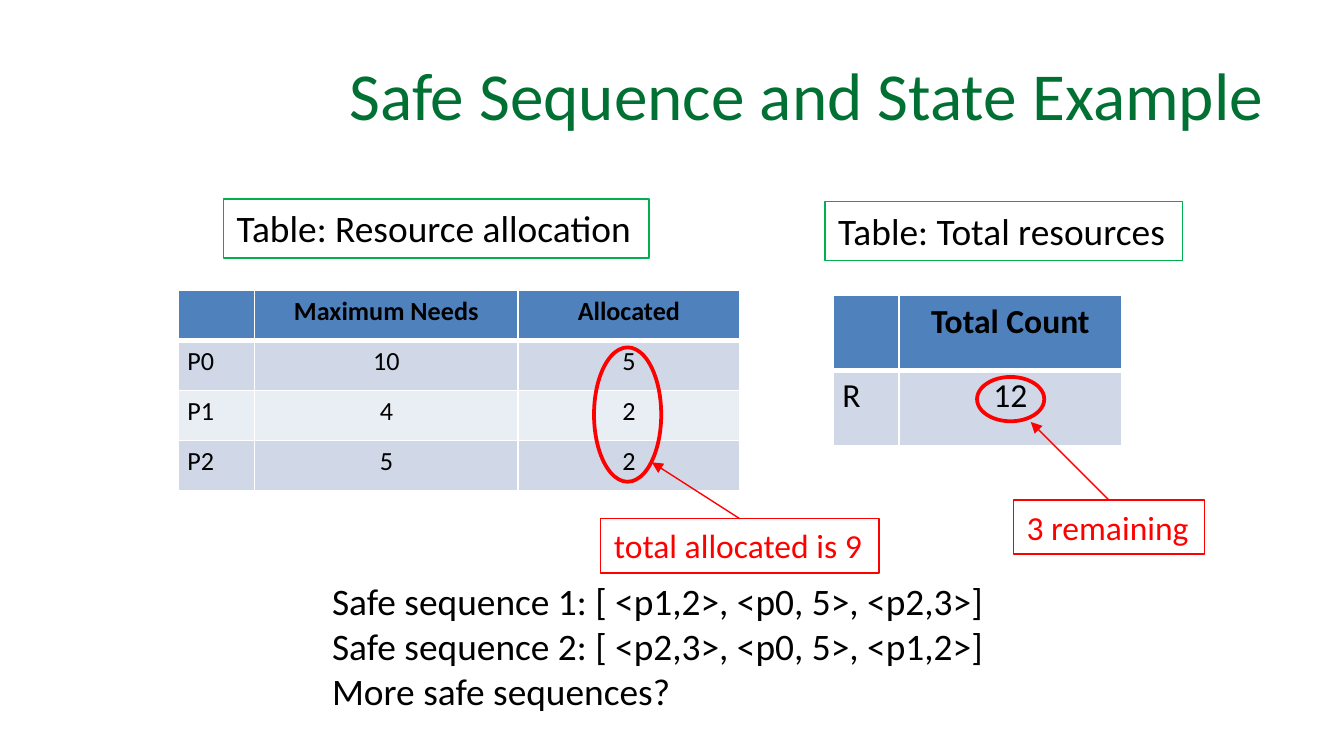
from dataclasses import dataclass

from pptx import Presentation
from pptx import util as u
from pptx.dml.color import RGBColor
from pptx.enum import shapes, text
from pptx.oxml import ns, xmlchemy
from lxml import etree

FONT = "Calibri"
BLACK = RGBColor(0x00, 0x00, 0x00)
WHITE = RGBColor(0xFF, 0xFF, 0xFF)
TITLE_GREEN = RGBColor(0x00, 0x70, 0x33)
CAPTION_GREEN = RGBColor(0x00, 0xB0, 0x50)
RED = RGBColor(0xFF, 0x00, 0x00)
HEADER_BLUE = RGBColor(0x4F, 0x81, 0xBD)
BANDS = (RGBColor(0xD0, 0xD8, 0xE8), RGBColor(0xE9, 0xED, 0xF4))

COLUMNS, ROWS = 100, 56.25
UNIT = u.Inches(10) / COLUMNS


@dataclass
class Box:
    left: float
    top: float
    width: float
    height: float

    def inside(self, left, top, width, height):
        return Box(self.left + left, self.top + top, width, height)

    def lengths(self):
        return [grid(n) for n in (self.left, self.top, self.width, self.height)]


def grid(cells):
    return u.Emu(round(cells * UNIT))


def write(text_frame, words, size, color, align=text.PP_ALIGN.LEFT, bold=False):
    text_frame.text = words
    for paragraph in text_frame.paragraphs:
        paragraph.alignment = align
        for run in paragraph.runs:
            run.font.name = FONT
            run.font.size = u.Pt(size)
            run.font.bold = bold
            run.font.color.rgb = color


def add_text(slide, box, words, size, color, align=text.PP_ALIGN.LEFT,
             outline=None, wrap=False):
    shape = slide.shapes.add_textbox(*box.lengths())
    shape.text_frame.word_wrap = wrap
    write(shape.text_frame, words, size, color, align)
    if outline is not None:
        shape.line.color.rgb = outline
        shape.line.width = u.Pt(0.75)
    return shape


def add_ring(slide, box):
    ring = slide.shapes.add_shape(shapes.MSO_SHAPE.OVAL, *box.lengths())
    ring.shadow.inherit = False
    ring.fill.background()
    ring.line.color.rgb = RED
    ring.line.width = u.Pt(2)


def add_arrow(slide, label, left, top):
    arrow = slide.shapes.add_connector(
        shapes.MSO_CONNECTOR.STRAIGHT, 0, 0, grid(left), grid(top))
    arrow.begin_connect(label, 0)
    arrow.line.color.rgb = RED
    arrow.line.width = u.Pt(0.75)
    properties = arrow._element.spPr
    head = etree.SubElement(properties.find(ns.qn("a:ln")), ns.qn("a:tailEnd"))
    head.set("type", "triangle")
    etree.SubElement(properties, ns.qn("a:effectLst"))


def add_borders(cell, row):
    properties = cell._tc.get_or_add_tcPr()
    widths = {"L": 1, "R": 1, "T": 3 if row == 1 else 1, "B": 3 if row == 0 else 1}
    for side, width in widths.items():
        border = xmlchemy.OxmlElement(f"a:ln{side}")
        border.set("w", str(u.Pt(width)))
        fill = etree.SubElement(border, ns.qn("a:solidFill"))
        etree.SubElement(fill, ns.qn("a:srgbClr")).set("val", str(WHITE))
        properties.append(border)


def add_grid_table(slide, box, widths, values, size):
    table = slide.shapes.add_table(len(values), len(widths), *box.lengths()).table
    for column, width in zip(table.columns, widths):
        column.width = grid(width)
    for row, line in enumerate(values):
        table.rows[row].height = grid(box.height / len(values))
        for column, words in enumerate(line):
            cell = table.cell(row, column)
            cell.margin_left = cell.margin_right = grid(0.7)
            cell.margin_top = cell.margin_bottom = grid(0.4)
            align = text.PP_ALIGN.CENTER if column else text.PP_ALIGN.LEFT
            write(cell.text_frame, words, size, BLACK, align, bold=row == 0)
            if not words:
                end = etree.SubElement(
                    cell.text_frame.paragraphs[0]._p, ns.qn("a:endParaRPr"))
                end.set("sz", str(size * 100))
            add_borders(cell, row)
            cell.fill.solid()
            cell.fill.fore_color.rgb = BANDS[(row - 1) % 2] if row else HEADER_BLUE


def add_panel(slide, box, caption, caption_box, widths, values, size,
              table_box, ring_box, note, note_box, tip):
    add_grid_table(slide, box.inside(*table_box), widths, values, size)
    add_text(slide, box.inside(*caption_box), caption, 20, BLACK,
             outline=CAPTION_GREEN)
    label = add_text(slide, box.inside(*note_box), note, 18, RED, outline=RED)
    add_ring(slide, box.inside(*ring_box))
    add_arrow(slide, label, box.left + tip[0], box.top + tip[1])


def add_title(slide, box):
    title = add_text(slide, box, "Safe Sequence and State Example", 36,
                     TITLE_GREEN, text.PP_ALIGN.RIGHT, wrap=True)
    title.text_frame.vertical_anchor = text.MSO_ANCHOR.MIDDLE


def add_sequences(slide, box):
    lines = ("Safe sequence 1: [ <p1,2>, <p0, 5>, <p2,3>]",
             "Safe sequence 2: [ <p2,3>, <p0, 5>, <p1,2>]",
             "More safe sequences?")
    add_text(slide, box, "\n".join(lines), 20, BLACK)


def main():
    presentation = Presentation()
    presentation.slide_width = grid(COLUMNS)
    presentation.slide_height = grid(ROWS)
    slide = presentation.slides.add_slide(presentation.slide_layouts[6])

    add_title(slide, Box(5, 2.3, 90, 9.4))
    add_panel(
        slide, Box(13.25, 14.8, 52.2, 27.8),
        caption="Table: Resource allocation", caption_box=(3.38, 0, 31.65, 4.4),
        widths=(5.7, 19.6, 16.5), size=14,
        values=(("", "Maximum Needs", "Allocated"), ("P0", "10", "5"),
                ("P1", "4", "2"), ("P2", "5", "2")),
        table_box=(0, 6.8, 41.8, 14.9), ring_box=(30.95, 11.05, 5, 10),
        note="total allocated is 9", note_box=(31.45, 23.8, 20.7, 4.04),
        tip=(35.25, 19.6))
    add_panel(
        slide, Box(61.38, 15, 28.2, 26.2),
        caption="Table: Total resources", caption_box=(0, 0, 26.6, 4.4),
        widths=(4.9, 16.6), size=18,
        values=(("", "Total Count"), ("R", "12")),
        table_box=(0.6, 7, 21.45, 11.15), ring_box=(11.32, 13.05, 5, 3.3),
        note="3 remaining", note_box=(14.02, 22.2, 14.2, 4.04),
        tip=(15.32, 16.4))
    add_sequences(slide, Box(23.72, 42.53, 50.9, 11.1))
    presentation.save("out.pptx")


if __name__ == "__main__":
    main()
